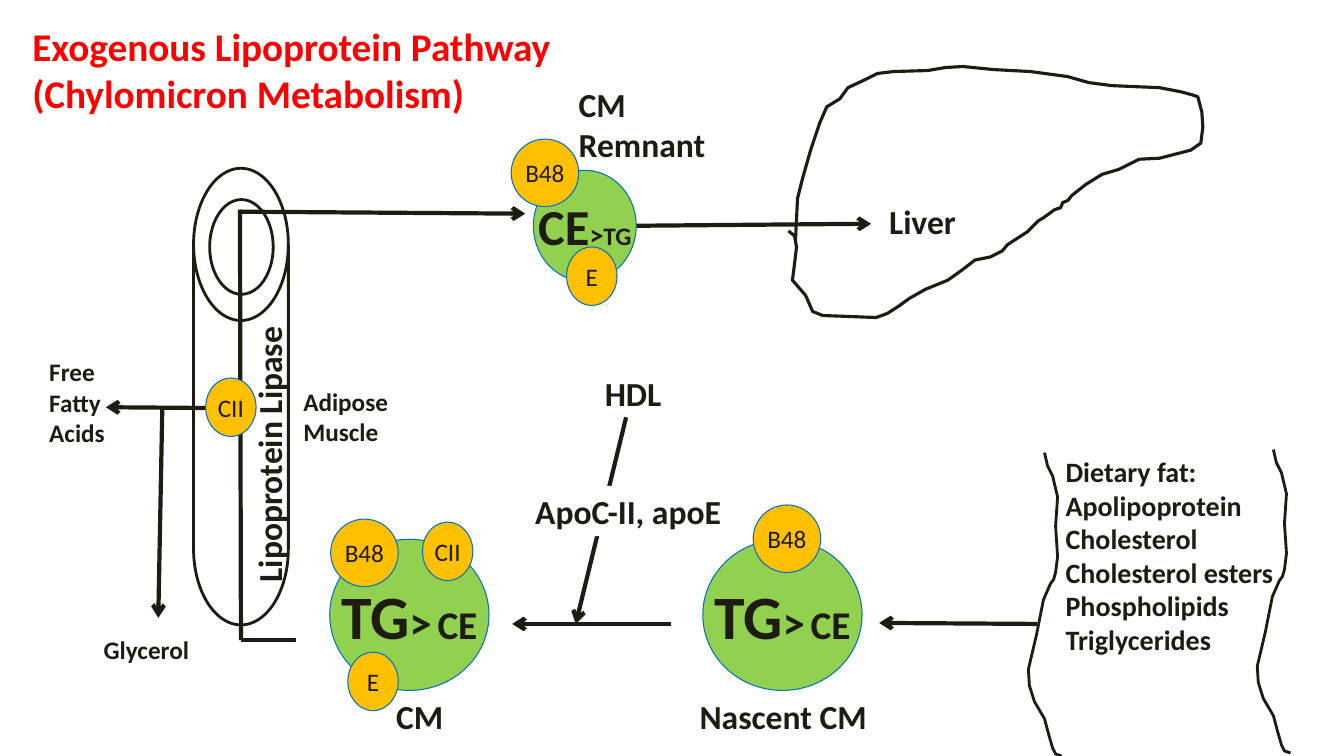
from lxml import etree
from pptx import Presentation
from pptx.dml.color import RGBColor
from pptx.enum.shapes import MSO_CONNECTOR, MSO_SHAPE
from pptx.enum.text import MSO_ANCHOR, MSO_AUTO_SIZE, PP_ALIGN
from pptx.oxml.ns import qn
from pptx.util import Pt

PX = 9144  # 100 px to the inch
FONT = "Calibri"
COLORS = {name: RGBColor.from_string(value) for name, value in {
    "ink": "1E1C11", "title": "FF0000", "edge": "0071C2",
    "particle": "92D050", "apo": "FFC000", "paper": "FFFFFF",
}.items()}


def paint(shape, fill, line, width):
    """Fill and outline a shape; None leaves the part empty."""
    shape.shadow.inherit = False
    if fill:
        shape.fill.solid()
        shape.fill.fore_color.rgb = COLORS[fill]
    else:
        shape.fill.background()
    if line:
        shape.line.color.rgb = COLORS[line]
        shape.line.width = Pt(width)
    else:
        shape.line.fill.background()


def write(frame, lines, size, color="ink", bold=True, align=PP_ALIGN.LEFT):
    """Write one paragraph per line; size None leaves sizes to the runs."""
    for number, line in enumerate(lines):
        paragraph = frame.add_paragraph() if number else frame.paragraphs[0]
        paragraph.alignment = align
        font = paragraph.font
        font.name, font.bold = FONT, bold
        font.color.rgb = COLORS[color]
        if size:
            font.size = Pt(size)
            paragraph.text = line
            continue
        for text, run_size in line:
            run = paragraph.add_run()
            run.text = text
            run.font.size = Pt(run_size)


prs = Presentation()
prs.slide_width, prs.slide_height = 1333 * PX, 750 * PX
slide = prs.slides.add_slide(prs.slide_layouts[5])
shapes = slide.shapes

title = shapes.title
title.left, title.top, title.width, title.height = (n * PX for n in (22, 17, 541, 104))
title.text_frame.auto_size = MSO_AUTO_SIZE.NONE
title.text_frame.vertical_anchor = MSO_ANCHOR.TOP
write(title.text_frame, ["Exogenous Lipoprotein Pathway (Chylomicron Metabolism)"], 28, "title")

# Liver and the two intestinal walls
liver = [
    (789, 238), (791, 197), (796, 177), (804, 149), (813, 122), (820, 106), (833, 98),
    (841, 87), (856, 80), (870, 73), (886, 71), (920, 70), (938, 67), (955, 66),
    (985, 69), (1022, 71), (1059, 76), (1080, 82), (1103, 85), (1150, 87), (1171, 91),
    (1182, 94), (1188, 96), (1192, 111), (1193, 126), (1191, 142), (1181, 149),
    (1150, 157), (1130, 158), (1110, 168), (1093, 173), (1077, 183), (1063, 194),
    (1059, 199), (1054, 201), (1052, 206), (1046, 208), (1035, 216), (1030, 219),
    (1019, 230), (1005, 239), (999, 243), (994, 249), (982, 255), (967, 258),
    (954, 268), (940, 278), (918, 287), (902, 296), (891, 304), (880, 311), (869, 315),
    (842, 314), (816, 313), (806, 309), (799, 293), (786, 278), (788, 262), (790, 245),
    (788, 234), (782, 229),
]
wall = [
    (1036, 449), (1039, 462), (1044, 472), (1049, 493), (1047, 522), (1049, 552),
    (1047, 568), (1045, 575), (1042, 579), (1038, 588), (1035, 595), (1028, 630),
    (1020, 664), (1021, 680), (1026, 696), (1036, 713), (1040, 728), (1044, 742),
    (1047, 748), (1053, 750),
]
right_wall = [(x + 227, y - 3) for x, y in wall]
for outline, width in ((liver, 2.25), (wall, 2), (right_wall, 2)):
    builder = shapes.build_freeform(*outline[0], scale=PX)
    builder.add_line_segments(outline[1:], close=False)
    paint(builder.convert_to_shape(), None, "ink", width)

# Capillary
for preset, box in (
    (MSO_SHAPE.FLOWCHART_MAGNETIC_DISK, (192, 167, 94, 453)),
    (MSO_SHAPE.OVAL, (208, 198, 63, 94)),
):
    paint(shapes.add_shape(preset, *(n * PX for n in box)), None, "ink", 2)

# Arrows and plain lines
for x1, y1, x2, y2, has_head in (
    (1029, 619, 872, 618, True),
    (666, 619, 508, 619, True),
    (621, 414, 571, 619, True),
    (239, 635, 238, 208, False),
    (239, 635, 294, 635, False),
    (239, 405, 105, 404, True),
    (161, 404, 157, 613, True),
    (631, 224, 864, 222, True),
    (238, 210, 521, 212, True),
):
    route = shapes.add_connector(MSO_CONNECTOR.STRAIGHT, x1 * PX, y1 * PX, x2 * PX, y2 * PX)
    route.line.color.rgb = COLORS["ink"]
    route.line.width = Pt(3)
    if has_head:
        etree.SubElement(route.line._get_or_add_ln(), qn("a:tailEnd"), type="arrow")
    etree.SubElement(route._element.spPr, qn("a:effectLst"))

# Lipoprotein particles, then the apolipoproteins on them
chylomicron = [("TG", 44), (">", 32), (" ", 18), ("CE", 28)]
remnant = [("CE", 36), (">", 20), ("TG", 18)]
B48, SMALL = (67, 67), (50, 58)
for fill, left, top, (width, height), runs in (
    ("particle", 697, 535, (158, 150), chylomicron),
    ("particle", 327, 535, (158, 150), chylomicron),
    ("particle", 529, 169, (102, 110), remnant),
    ("apo", 747, 501, B48, [("B48", 18)]),
    ("apo", 328, 515, B48, [("B48", 18)]),
    ("apo", 507, 138, B48, [("B48", 18)]),
    ("apo", 419, 518, SMALL, [("CII", 18)]),
    ("apo", 204, 375, SMALL, [("CII", 18)]),
    ("apo", 345, 647, SMALL, [("E", 18)]),
    ("apo", 562, 245, SMALL, [("E", 18)]),
):
    ball = shapes.add_shape(MSO_SHAPE.OVAL, left * PX, top * PX, width * PX, height * PX)
    paint(ball, fill, "edge", 0.75)
    ball.text_frame.word_wrap = False
    ball.text_frame.vertical_anchor = MSO_ANCHOR.MIDDLE
    write(ball.text_frame, [runs], None, bold=fill == "particle", align=PP_ALIGN.CENTER)

# Labels
diet = ["Dietary fat:", "Apolipoprotein", "Cholesterol", "Cholesterol esters",
        "Phospholipids", "Triglycerides"]
for box, lines, size, turn, fill in (
    ((123, 419, 287, 50), ["Lipoprotein Lipase"], 24, 270, None),
    ((93, 624, 110, 40), ["Glycerol"], 18, 0, None),
    ((39, 349, 110, 101), ["Free Fatty Acids"], 18, 0, None),
    ((291, 378, 106, 71), ["Adipose Muscle"], 18, 0, None),
    ((590, 365, 118, 50), ["HDL"], 24, 0, None),
    ((521, 482, 218, 50), ["ApoC-II, apoE"], 24, 0, "paper"),
    ((684, 685, 205, 50), ["Nascent CM"], 24, 0, None),
    ((383, 685, 205, 50), ["CM"], 24, 0, None),
    ((564, 78, 161, 91), ["CM Remnant"], 24, 0, None),
    ((872, 194, 87, 50), ["Liver"], 24, 0, None),
    ((1047, 446, 235, 252), diet, 20, 0, None),
):
    label = shapes.add_textbox(*(n * PX for n in box))
    label.rotation = turn
    label.text_frame.word_wrap = True
    if fill:
        paint(label, fill, None, 0)
    write(label.text_frame, lines, size)

prs.save("out.pptx")
